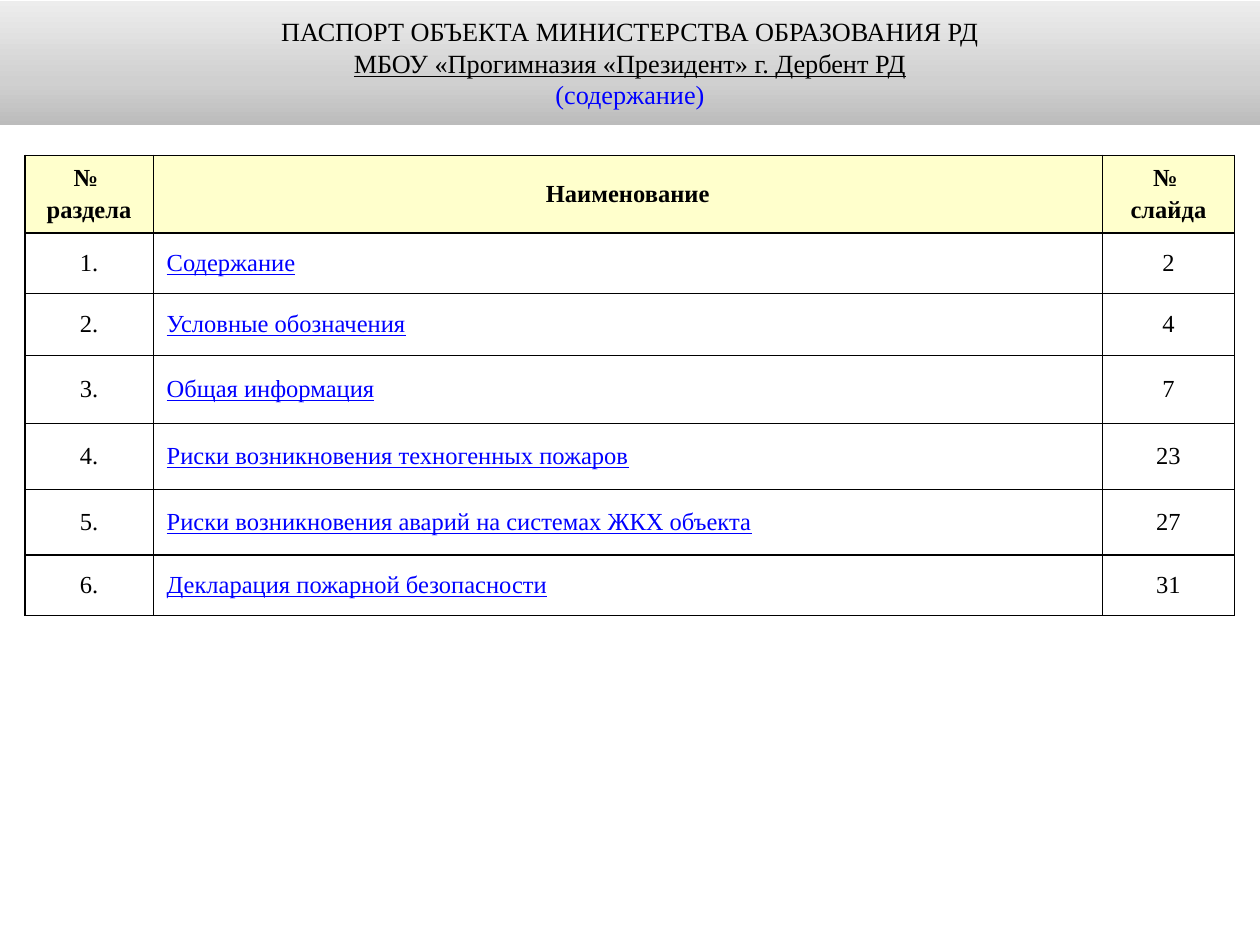
import copy
from dataclasses import dataclass

import pptx
import pptx.dml.color
import pptx.enum.dml
import pptx.enum.shapes
import pptx.enum.text
import pptx.oxml
import pptx.oxml.ns
import pptx.util

Cm = pptx.util.Cm
Pt = pptx.util.Pt
Align = pptx.enum.text.PP_ALIGN
Anchor = pptx.enum.text.MSO_ANCHOR


@dataclass(frozen=True)
class Theme:
    font: str = "Times New Roman"
    ink: str = "000000"
    link: str = "0000FF"
    head: str = "FFFFCC"
    body: str = "FFFFFF"
    grad: tuple = ((0, "BCBCBC"), (0.35, "D0D0D0"), (1, "EDEDED"))
    title: float = 15
    text: float = 14
    gap: float = 2.5
    rule: float = 1


@dataclass(frozen=True)
class Style:
    size: float
    color: str
    bold: bool = False
    line: bool = False
    align: Align = Align.CENTER
    gap: float = 0


@dataclass(frozen=True)
class Entry:
    name: str
    page: int
    height: float


THEME = Theme()
HEAD = Style(THEME.text, THEME.ink, bold=True, gap=THEME.gap)
PLAIN = Style(THEME.text, THEME.ink)
LINK = Style(THEME.text, THEME.link, line=True, align=Align.LEFT)

TITLE = (
    ("ПАСПОРТ ОБЪЕКТА МИНИСТЕРСТВА ОБРАЗОВАНИЯ РД", Style(THEME.title, THEME.ink)),
    ("МБОУ «Прогимназия «Президент» г. Дербент РД",
     Style(THEME.title, THEME.ink, line=True)),
    ("(содержание)", Style(THEME.title, THEME.link)),
)
LABELS = ("№ \nраздела", "Наименование", "№ \nслайда")
WIDTHS = (2.59, 19.13, 2.67)
TOP = 1.57
ENTRIES = (
    Entry("Содержание", 2, 1.22),
    Entry("Условные обозначения", 4, 1.25),
    Entry("Общая информация", 7, 1.37),
    Entry("Риски возникновения техногенных пожаров", 23, 1.33),
    Entry("Риски возникновения аварий на системах ЖКХ объекта", 27, 1.32),
    Entry("Декларация пожарной безопасности", 31, 1.22),
)


def rgb(code: str) -> pptx.dml.color.RGBColor:
    return pptx.dml.color.RGBColor.from_string(code)


def format_line(para, style: Style) -> None:
    para.alignment = style.align
    para.space_before = Pt(style.gap)
    for run in para.runs:
        font = run.font
        font.name = THEME.font
        font.size = Pt(style.size)
        font.bold = style.bold
        font.underline = style.line
        font.color.rgb = rgb(style.color)


def draw_border(cell) -> None:
    props = cell._tc.get_or_add_tcPr()
    space = pptx.oxml.ns.nsdecls("a")
    for spot, side in enumerate(("lnL", "lnR", "lnT", "lnB")):
        props.insert(spot, pptx.oxml.parse_xml(
            f'<a:{side} {space} w="{Pt(THEME.rule)}"><a:solidFill>'
            f'<a:srgbClr val="{THEME.ink}"/></a:solidFill></a:{side}>'))


def fill_cell(cell, text: str, style: Style, color: str) -> None:
    cell.fill.solid()
    cell.fill.fore_color.rgb = rgb(color)
    cell.vertical_anchor = Anchor.MIDDLE
    cell.margin_left = cell.margin_right = Cm(0.27)
    cell.margin_top = cell.margin_bottom = Cm(0.13)
    cell.text_frame.text = text
    for para in cell.text_frame.paragraphs:
        format_line(para, style)
    draw_border(cell)


def draw_table(slide) -> None:
    heights = (TOP, *(entry.height for entry in ENTRIES))
    table = slide.shapes.add_table(
        len(heights), len(WIDTHS), Cm(0.5), Cm(3.13),
        Cm(sum(WIDTHS)), Cm(sum(heights))).table
    for col, width in zip(table.columns, WIDTHS):
        col.width = Cm(width)
    for row, height in zip(table.rows, heights):
        row.height = Cm(height)
    for cell, label in zip(table.rows[0].cells, LABELS):
        fill_cell(cell, label, HEAD, THEME.head)
    for num, entry in enumerate(ENTRIES, 1):
        texts = (f"{num}.", entry.name, str(entry.page))
        for cell, text, style in zip(table.rows[num].cells, texts,
                                     (PLAIN, LINK, PLAIN)):
            fill_cell(cell, text, style, THEME.body)


def shade(fill) -> None:
    """Set the theme gradient, running from bottom to top."""
    fill.gradient()
    fill.gradient_angle = 90
    stops = fill._fill._gradFill.gsLst
    stops.insert(1, copy.deepcopy(stops[0]))
    for stop, (place, color) in zip(fill.gradient_stops, THEME.grad):
        stop.position = place
        stop.color.rgb = rgb(color)


def draw_title(slide, width: int) -> None:
    band = slide.shapes.add_shape(
        pptx.enum.shapes.MSO_SHAPE.RECTANGLE, 0, Cm(0.02), width, Cm(2.5))
    band.shadow.inherit = False
    band.line.fill.background()
    shade(band.fill)
    frame = band.text_frame
    frame.word_wrap = True
    frame.vertical_anchor = Anchor.MIDDLE
    frame.text = "\n".join(text for text, _ in TITLE)
    for para, (_, style) in zip(frame.paragraphs, TITLE):
        format_line(para, style)


def main() -> None:
    deck = pptx.Presentation()
    deck.slide_width, deck.slide_height = Cm(25.4), Cm(19.05)
    slide = deck.slides.add_slide(deck.slide_layouts[6])
    draw_table(slide)
    draw_title(slide, deck.slide_width)
    deck.save("out.pptx")


if __name__ == "__main__":
    main()
